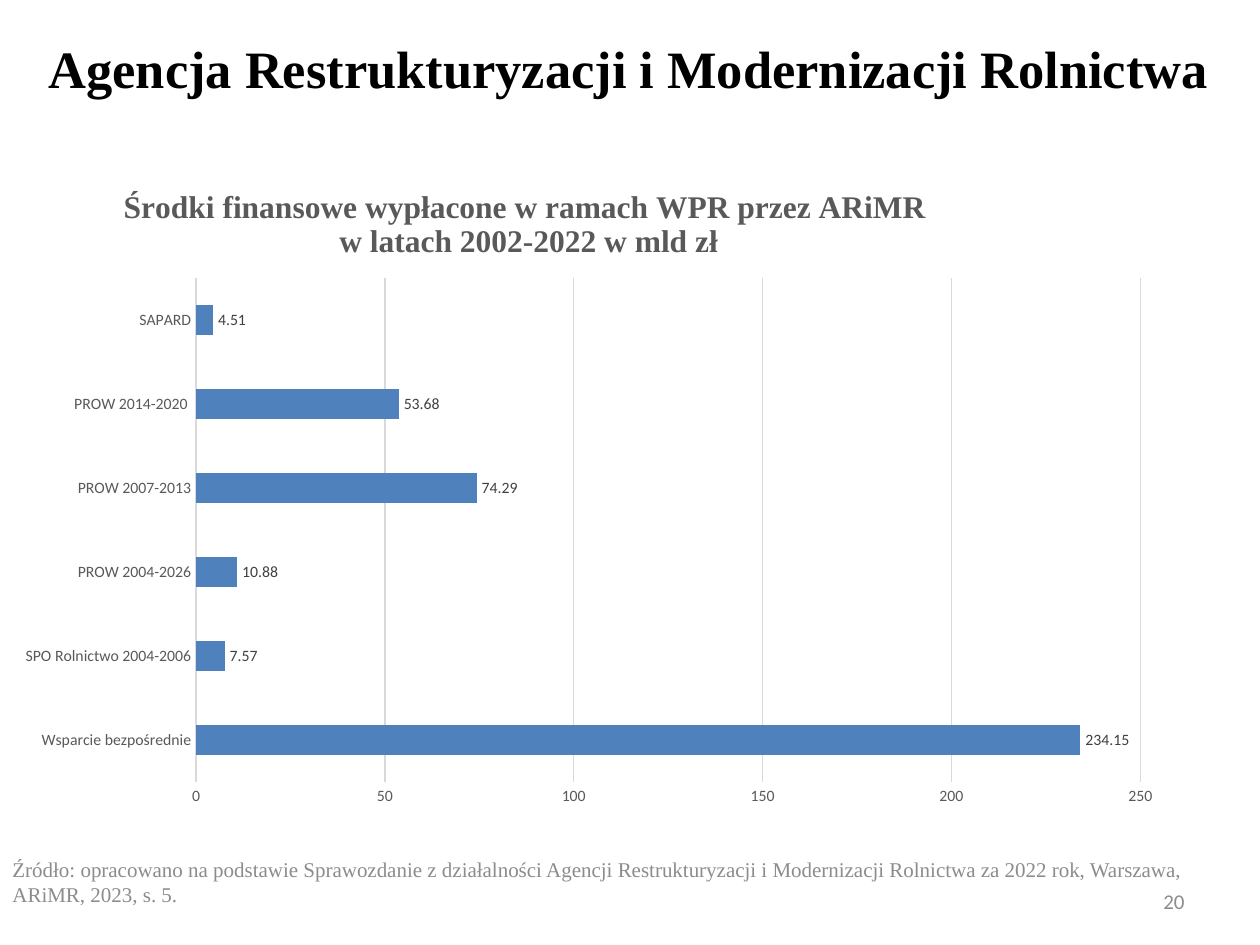
from dataclasses import dataclass

import pptx
import pptx.chart.data
import pptx.dml.color
import pptx.enum.chart
import pptx.enum.text
import pptx.oxml
import pptx.oxml.ns
import pptx.util

Inches = pptx.util.Inches
Pt = pptx.util.Pt
Align = pptx.enum.text.PP_ALIGN
Anchor = pptx.enum.text.MSO_ANCHOR
SERIF, SANS = "Times New Roman", "Calibri"
GRID = "D9D9D9"


@dataclass
class Note:
    text: str
    left: float
    top: float
    width: float
    height: float
    font: str
    align: Align


@dataclass
class Payment:
    programme: str
    billions: float


NOTES = [
    Note("Źródło: opracowano na podstawie Sprawozdanie z działalności Agencji "
         "Restrukturyzacji i Modernizacji Rolnictwa za 2022 rok, Warszawa, "
         "ARiMR, 2023, s. 5.", 0, 6.8, 9.49, 0.4, SERIF, Align.JUSTIFY),
    Note("20", 7.17, 6.95, 2.33, 0.4, SANS, Align.RIGHT),
]
PAYMENTS = [
    Payment("Wsparcie bezpośrednie", 234.15),
    Payment("SPO Rolnictwo 2004-2006", 7.57),
    Payment("PROW 2004-2026", 10.88),
    Payment("PROW 2007-2013", 74.29),
    Payment("PROW 2014-2020 ", 53.68),
    Payment("SAPARD", 4.51),
]


def rgb(value: str) -> pptx.dml.color.RGBColor:
    return pptx.dml.color.RGBColor.from_string(value)


def set_font(font, color: str, **values) -> None:
    for name, value in values.items():
        setattr(font, name, value)
    font.color.rgb = rgb(color)


def set_line(line, color: str) -> None:
    line.color.rgb = rgb(color)
    line.width = Pt(0.75)


def place(shape, left: float, top: float, width: float, height: float) -> None:
    for name, value in dict(left=left, top=top, width=width, height=height).items():
        setattr(shape, name, Inches(value))


def add_note(slide, note: Note) -> None:
    box = slide.shapes.add_textbox(0, 0, 0, 0)
    place(box, note.left, note.top, note.width, note.height)
    frame = box.text_frame
    frame.word_wrap = True
    frame.vertical_anchor = Anchor.MIDDLE
    paragraph = frame.paragraphs[0]
    paragraph.text = note.text
    paragraph.alignment = note.align
    set_font(paragraph.runs[0].font, "8C8C8C", name=note.font, size=Pt(12))


def set_layout(parent, index: int, inner: bool = False, **fractions: float) -> None:
    """Fix a chart part at fractions of the chart area."""
    old = parent.find(pptx.oxml.ns.qn("c:layout"))
    if old is not None:
        parent.remove(old)
    target = '<c:layoutTarget val="inner"/>' if inner else ""
    modes = "".join(f'<c:{key}Mode val="edge"/>' for key in "xy")
    values = "".join(f'<c:{key} val="{value}"/>' for key, value in fractions.items())
    parent.insert(index, pptx.oxml.parse_xml(
        f'<c:layout {pptx.oxml.ns.nsdecls("c")}><c:manualLayout>'
        f"{target}{modes}{values}</c:manualLayout></c:layout>"))


def add_payment_chart(slide) -> None:
    data = pptx.chart.data.CategoryChartData()
    data.categories = [payment.programme for payment in PAYMENTS]
    data.add_series("Series 1", [payment.billions for payment in PAYMENTS])
    chart = slide.shapes.add_chart(
        pptx.enum.chart.XL_CHART_TYPE.BAR_CLUSTERED,
        Inches(0.02), Inches(1.31), Inches(9.31), Inches(5.19), data).chart
    chart.has_legend = False
    set_font(chart.font, "000000", name=SANS, size=Pt(10))

    # Chart title
    heading = chart.chart_title.text_frame
    heading.text = ("Środki finansowe wypłacone w ramach WPR przez ARiMR \n"
                    "w latach 2002-2022 w mld zł")
    for paragraph in heading.paragraphs:
        paragraph.alignment = Align.CENTER
        set_font(paragraph.runs[0].font, "595959", name=SERIF, size=Pt(18), bold=True)
    set_layout(chart.chart_title.element, 1, x=0.1, y=0.03)

    # Axes
    for axis in (chart.category_axis, chart.value_axis):
        axis.major_tick_mark = pptx.enum.chart.XL_TICK_MARK.NONE
        axis.minor_tick_mark = pptx.enum.chart.XL_TICK_MARK.NONE
        set_font(axis.tick_labels.font, "595959", name=SANS, size=Pt(9))
    set_line(chart.category_axis.format.line, GRID)
    amounts = chart.value_axis
    amounts.minimum_scale, amounts.maximum_scale, amounts.major_unit = 0, 250, 50
    amounts.format.line.fill.background()
    set_line(amounts.major_gridlines.format.line, GRID)

    # Bars and their values
    plot = chart.plots[0]
    plot.gap_width = 182
    plot.vary_by_categories = False
    bars = plot.series[0]
    bars.format.fill.solid()
    bars.format.fill.fore_color.rgb = rgb("4F81BD")
    labels = bars.data_labels
    labels.show_value = True
    labels.position = pptx.enum.chart.XL_LABEL_POSITION.OUTSIDE_END
    set_font(labels.font, "404040", name=SANS, size=Pt(9))
    plot_area = chart.element.find(".//" + pptx.oxml.ns.qn("c:plotArea"))
    set_layout(plot_area, 0, inner=True, x=0.165, y=0.173, w=0.805, h=0.771)


def main() -> None:
    deck = pptx.Presentation()
    deck.slide_width, deck.slide_height = Inches(10), Inches(7.5)
    slide = deck.slides.add_slide(deck.slide_layouts[5])

    # Slide title
    title = slide.shapes.title
    place(title, 0, 0, 9.98, 0.84)
    title.text_frame.text = "Agencja Restrukturyzacji i Modernizacji Rolnictwa"
    title.text_frame.vertical_anchor = Anchor.BOTTOM
    paragraph = title.text_frame.paragraphs[0]
    paragraph.alignment = Align.CENTER
    paragraph.line_spacing = Pt(30)
    set_font(paragraph.runs[0].font, "000000", name=SERIF, size=Pt(30), bold=True)

    # Source and page number
    for note in NOTES:
        add_note(slide, note)

    add_payment_chart(slide)
    deck.save("out.pptx")


if __name__ == "__main__":
    main()
